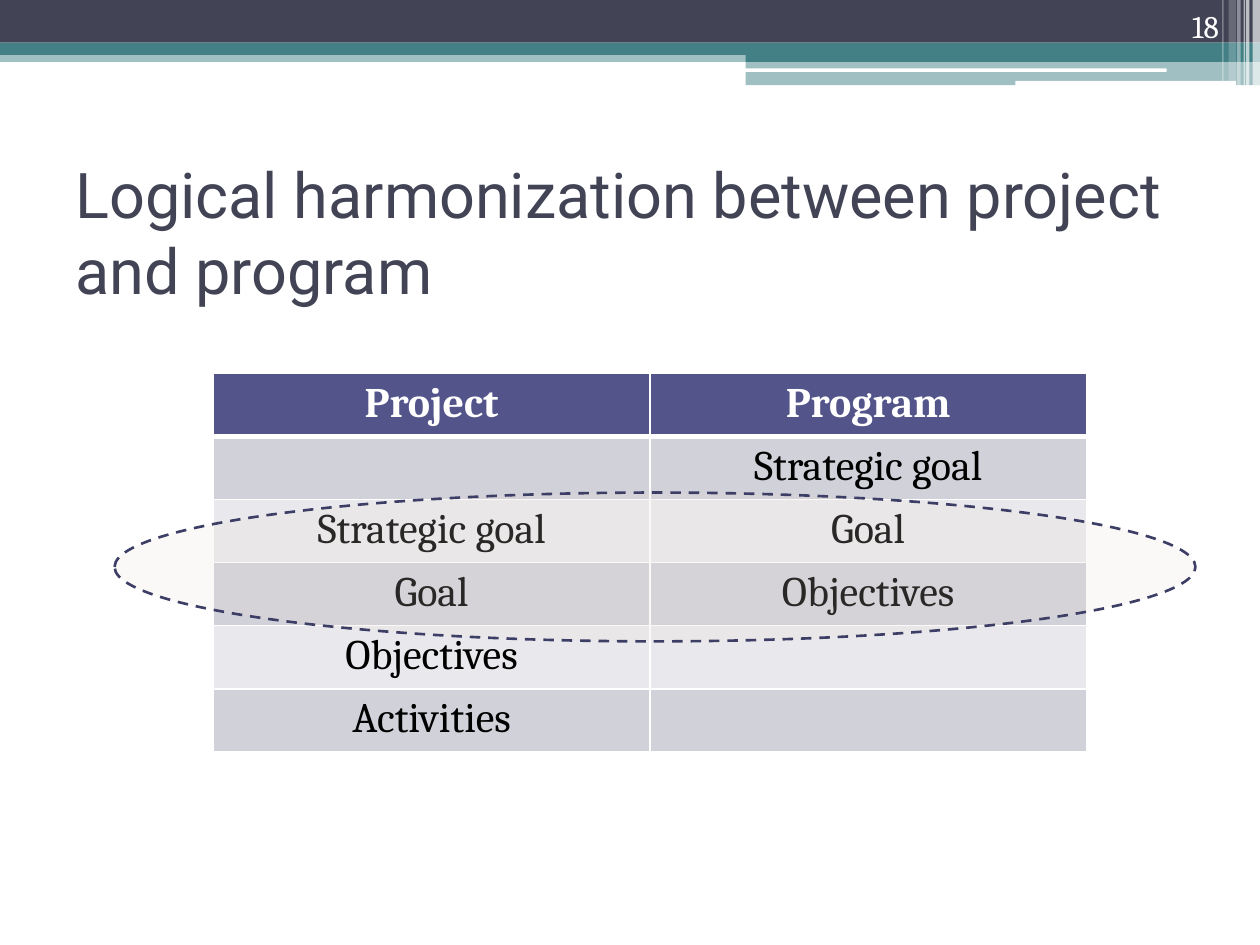
import pptx
import pptx.dml.color
import pptx.enum.dml
import pptx.enum.shapes
import pptx.enum.text
import pptx.oxml
import pptx.oxml.ns
import pptx.util
from lxml import etree

Cm = pptx.util.Cm
Pt = pptx.util.Pt
Shape = pptx.enum.shapes.MSO_SHAPE
Align = pptx.enum.text.PP_ALIGN
Anchor = pptx.enum.text.MSO_ANCHOR

TEAL, NAVY, WHITE = "438086", "424456", "FFFFFF"


def colour(value):
    return pptx.dml.color.RGBColor.from_string(value)


def set_fill(fill, value, opacity=100):
    """Apply a solid fill, with opacity in percent."""
    fill.solid()
    fill.fore_color.rgb = colour(value)
    if opacity < 100:
        element = fill._xPr.find(".//" + pptx.oxml.ns.qn("a:srgbClr"))
        alpha = etree.SubElement(element, pptx.oxml.ns.qn("a:alpha"))
        alpha.set("val", str(opacity * 1000))


class SlideBuilder:
    def __init__(self, slide):
        self.slide = slide
        self.body_font = "Cambria"
        self.title_font = "Roboto"
        self.border = WHITE

    def shape(self, kind, box, fill, opacity=100):
        shape = self.slide.shapes.add_shape(kind, *map(Cm, box))
        shape.shadow.inherit = False
        set_fill(shape.fill, fill, opacity)
        shape.line.fill.background()
        return shape

    def dashed_ellipse(self, box, fill, opacity, line):
        ellipse = self.shape(Shape.OVAL, box, fill, opacity)
        ellipse.line.color.rgb = colour(line)
        ellipse.line.width = Pt(1.5)
        ellipse.line.dash_style = pptx.enum.dml.MSO_LINE.DASH

    def add_text(self, paragraph, text, align, **font_format):
        paragraph.alignment = align
        run = paragraph.add_run()
        run.text = text
        run.font.color.rgb = colour(font_format.pop("color"))
        for name, value in font_format.items():
            setattr(run.font, name, value)

    def text(self, box, text, align, anchor, **font_format):
        frame = self.slide.shapes.add_textbox(*map(Cm, box)).text_frame
        frame.word_wrap = True
        frame.vertical_anchor = anchor
        self.add_text(frame.paragraphs[0], text, align, **font_format)

    def cell_borders(self, cell, widths):
        """Draw cell borders; widths maps a side (L, R, T, B) to points."""
        properties = cell._tc.get_or_add_tcPr()
        for index, (side, width) in enumerate(widths.items()):
            line = pptx.oxml.parse_xml(
                f'<a:ln{side} {pptx.oxml.ns.nsdecls("a")} w="{Pt(width)}">'
                f'<a:solidFill><a:srgbClr val="{self.border}"/></a:solidFill>'
                f'</a:ln{side}>')
            properties.insert(index, line)

    def table(self, box, rows, header_fill, band_fills):
        frame = self.slide.shapes.add_table(len(rows), len(rows[0]), *map(Cm, box))
        for row_index, row in enumerate(rows):
            header = row_index == 0
            fill = header_fill if header else band_fills[(row_index - 1) % 2]
            top = 3 if row_index == 1 else 1
            for column_index, text in enumerate(row):
                cell = frame.table.cell(row_index, column_index)
                set_fill(cell.fill, fill)
                self.cell_borders(cell, {"L": 1, "R": 1, "T": top, "B": 3 if header else 1})
                if text:
                    self.add_text(cell.text_frame.paragraphs[0], text, Align.CENTER,
                                  name=self.body_font, size=Pt(24), bold=header,
                                  color=WHITE if header else "000000")


def main():
    presentation = pptx.Presentation()
    presentation.slide_width, presentation.slide_height = Cm(25.4), Cm(19.05)
    slide = presentation.slides.add_slide(presentation.slide_layouts[6])
    builder = SlideBuilder(slide)

    bands = [
        ((0, 1.02, 25.4, 0.23), TEAL, 50),
        ((0, 0, 25.4, 0.86), NAVY, 100),
        ((0, 0.86, 25.4, 0.25), TEAL, 100),
        ((15.03, 1, 10.37, 0.25), TEAL, 100),
        ((15.03, 1.22, 10.37, 0.5), TEAL, 50),
    ]
    for box, fill, opacity in bands:
        builder.shape(Shape.RECTANGLE, box, fill, opacity)

    for box in [(15.01, 1.38, 8.51, 0.07), (20.47, 1.63, 4.45, 0.1)]:
        builder.shape(Shape.ROUNDED_RECTANGLE, box, WHITE)

    # left, width, height, opacity
    stripes = [
        (25.25, 0.15, 1.73, 65), (25.12, 0.07, 1.73, 65),
        (25.07, 0.03, 1.73, 60), (24.94, 0.07, 1.73, 40),
        (24.77, 0.15, 1.63, 20), (24.64, 0.03, 1.63, 30),
    ]
    for left, width, height, opacity in stripes:
        builder.shape(Shape.RECTANGLE, (left, 0, width, height), WHITE, opacity)

    builder.text((1.27, 3.18, 22.86, 2.97),
                 "Logical harmonization between project and program",
                 Align.LEFT, Anchor.MIDDLE,
                 name=builder.title_font, size=Pt(36), color=NAVY)
    builder.table((4.3, 7.53, 17.6, 7.38), [
        ("Project", "Program"),
        ("", "Strategic goal"),
        ("Strategic goal", "Goal"),
        ("Goal", "Objectives"),
        ("Objectives", ""),
        ("Activities", ""),
    ], "53548A", ("D1D1DA", "E9E9ED"))
    builder.text((22.71, 0, 2.11, 1.02), "18", Align.RIGHT, Anchor.BOTTOM,
                 name=builder.body_font, size=Pt(18), color=WHITE)
    builder.dashed_ellipse((2.31, 9.93, 21.79, 3), "ECDED4", 18, "3D3E66")

    presentation.save("out.pptx")


if __name__ == "__main__":
    main()
